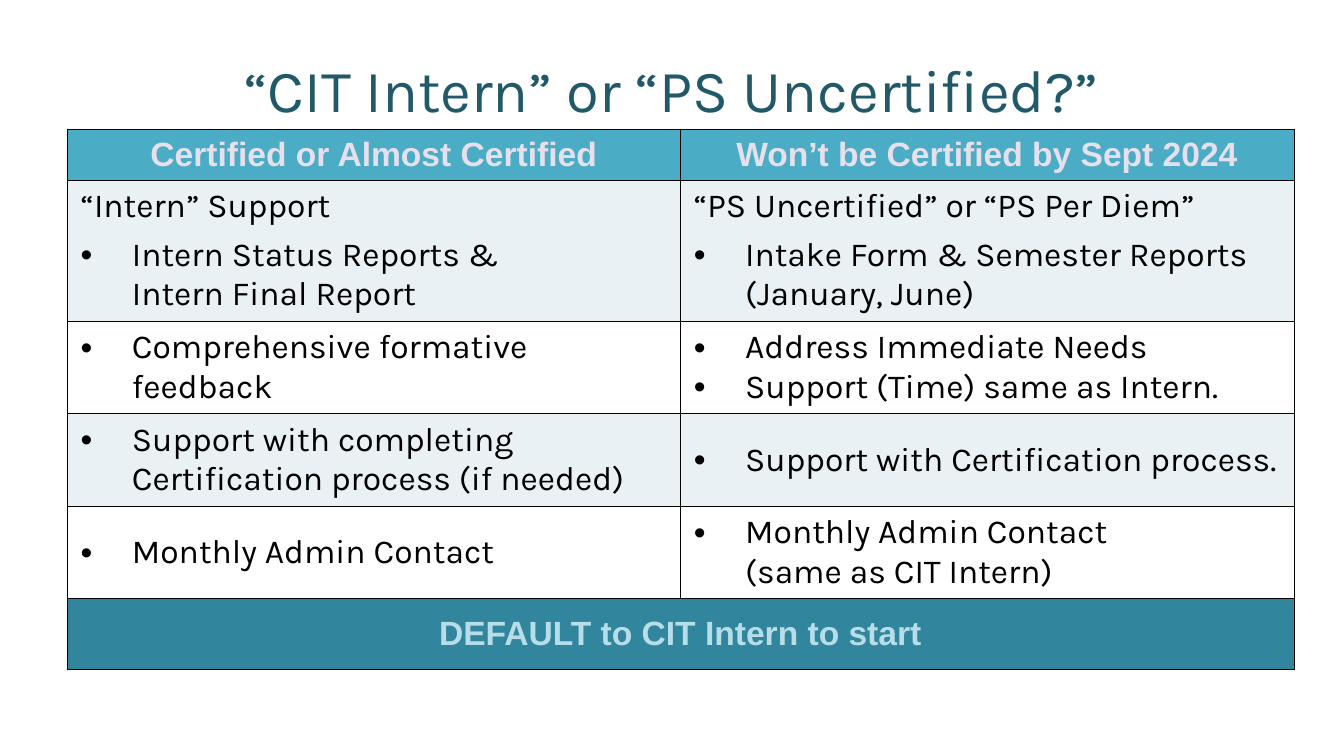
from lxml import etree
from pptx import Presentation
from pptx.dml.color import RGBColor
from pptx.enum.text import MSO_ANCHOR as Anchor, PP_ALIGN as Align
from pptx.oxml.ns import qn
from pptx.util import Cm, Pt

COLORS = {
    "title": "215968",
    "header": "4BACC6",
    "header_text": "E6E0EC",
    "band": "E9F1F5",
    "plain": "FFFFFF",
    "text": "000000",
    "border": "000000",
    "footer": "31859C",
    "footer_text": "B7DEE8",
}
# Lines that start with "• " become bulleted paragraphs.
ROWS = [
    (["Certified or Almost Certified"], ["Won’t be Certified by Sept 2024"]),
    (["“Intern” Support", "• Intern Status Reports &\nIntern Final Report"],
     ["“PS Uncertified” or “PS Per Diem”",
      "• Intake Form & Semester Reports (January, June)"]),
    (["• Comprehensive formative feedback"],
     ["• Address Immediate Needs", "• Support (Time) same as Intern."]),
    (["• Support with completing Certification process (if needed)"],
     ["• Support with Certification process."]),
    (["• Monthly Admin Contact"],
     ["• Monthly Admin Contact\n(same as CIT Intern)"]),
    (["DEFAULT to CIT Intern to start"], []),
]
ROW_HEIGHTS = [0.96, 2.66, 1.75, 1.75, 1.75, 1.34]
ROW_FILLS = ["header", "band", "plain", "band", "plain", "footer"]
HEADINGS = {0: "header_text", len(ROWS) - 1: "footer_text"}


def add_borders(cell):
    properties = cell._tc.get_or_add_tcPr()
    for side in ("lnL", "lnR", "lnT", "lnB"):
        line = etree.SubElement(properties, qn(f"a:{side}"), w=str(Pt(0.25)))
        fill = etree.SubElement(line, qn("a:solidFill"))
        etree.SubElement(fill, qn("a:srgbClr"), val=COLORS["border"])


def add_bullet(para):
    properties = para._p.get_or_add_pPr()
    properties.set("marL", str(Cm(0.97)))
    properties.set("indent", str(-Cm(0.97)))
    color = etree.SubElement(properties, qn("a:buClr"))
    etree.SubElement(color, qn("a:srgbClr"), val=COLORS["text"])
    etree.SubElement(properties, qn("a:buFont"), typeface="Arial")
    etree.SubElement(properties, qn("a:buChar"), char="•")


deck = Presentation()
deck.slide_width, deck.slide_height = Cm(25.4), Cm(14.29)
page = deck.slides.add_slide(deck.slide_layouts[5])

title = page.shapes.title
title.left, title.top, title.width, title.height = Cm(1.27), Cm(0.58), Cm(22.86), Cm(2.18)
title.text_frame.text = "“CIT Intern” or “PS Uncertified?”"
title.text_frame.vertical_anchor = Anchor.MIDDLE
para = title.text_frame.paragraphs[0]
para.alignment = Align.CENTER
para.font.name, para.font.size = "Karla", Pt(32)
para.font.color.rgb = RGBColor.from_string(COLORS["title"])

table = page.shapes.add_table(
    len(ROWS), 2, Cm(1.27), Cm(2.44), Cm(23.18), Cm(sum(ROW_HEIGHTS))
).table
table.first_row = table.horz_banding = False
for row, height in zip(table.rows, ROW_HEIGHTS):
    row.height = Cm(height)
table.cell(len(ROWS) - 1, 0).merge(table.cell(len(ROWS) - 1, 1))

for row_index, row_texts in enumerate(ROWS):
    is_heading = row_index in HEADINGS
    text_color = COLORS[HEADINGS.get(row_index, "text")]
    for column_index, lines in enumerate(row_texts):
        cell = table.cell(row_index, column_index)
        add_borders(cell)
        cell.fill.solid()
        cell.fill.fore_color.rgb = RGBColor.from_string(COLORS[ROW_FILLS[row_index]])
        cell.vertical_anchor = Anchor.MIDDLE
        for line_index, line in enumerate(lines):
            frame = cell.text_frame
            para = frame.add_paragraph() if line_index else frame.paragraphs[0]
            para.text = line.removeprefix("• ")
            if line.startswith("• "):
                add_bullet(para)
            if line_index and row_index == 1:
                para.space_before = Pt(4.8)
            para.alignment = Align.CENTER if is_heading else Align.LEFT
            para.font.name = "Arial" if is_heading else "Karla"
            para.font.size = Pt(18)
            para.font.bold = is_heading
            para.font.color.rgb = RGBColor.from_string(text_color)

deck.save("out.pptx")
